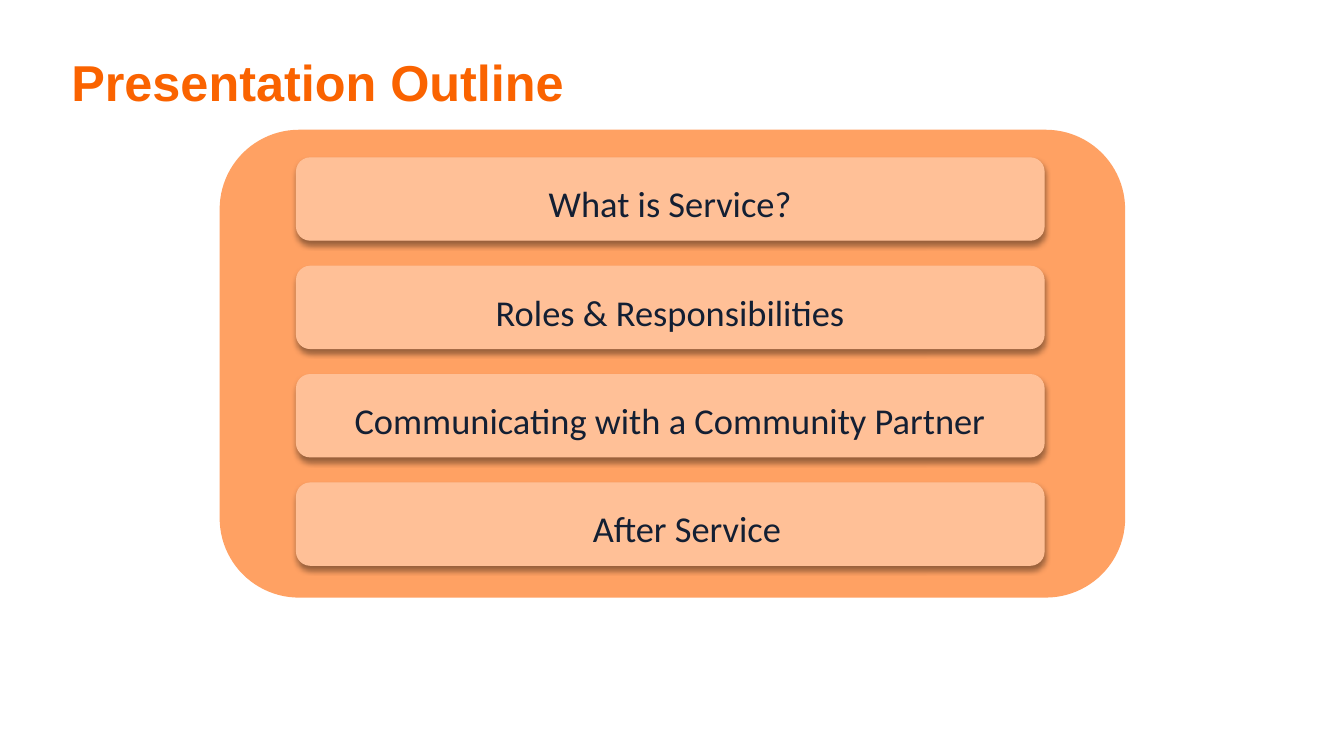
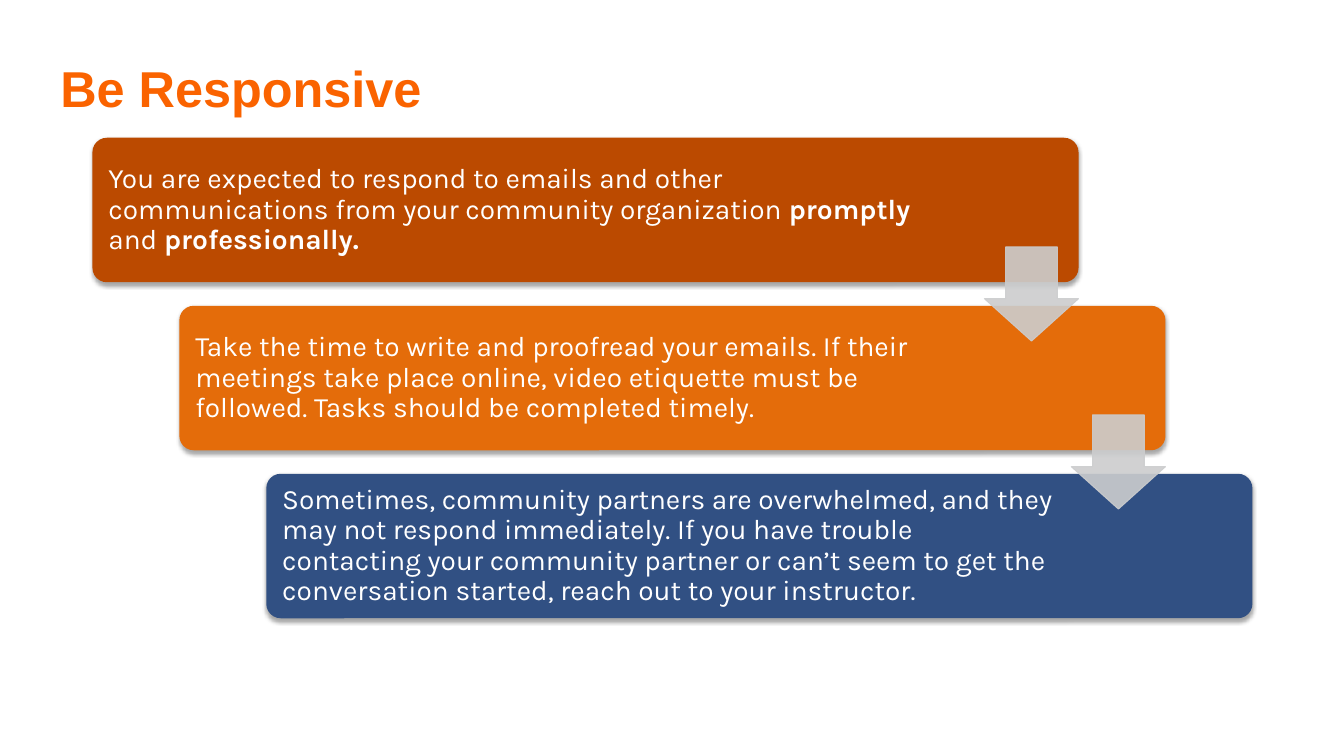
import dataclasses

import pptx
import pptx.dml.color
import pptx.enum.shapes
import pptx.enum.text
import pptx.oxml.ns
import pptx.util
from lxml import etree

SLIDE_WIDTH = pptx.util.Inches(13.33)
SLIDE_HEIGHT = pptx.util.Inches(7.5)
COLUMNS, ROWS = 160, 90

SHAPES = pptx.enum.shapes.MSO_SHAPE
ALIGN = pptx.enum.text.PP_ALIGN
ANCHOR = pptx.enum.text.MSO_ANCHOR


@dataclasses.dataclass(frozen=True)
class Theme:
    title: str = "FA6300"
    panel: str = "FFA163"
    pill: str = "FFC097"
    pill_text: str = "131F33"
    steps: tuple = ("BB4A00", "E46C0A", "315083")
    step_text: str = "FFFFFF"
    arrow: str = "CCCDCE"
    shadow: str = "000000"
    title_font: str = "Arial"
    pill_font: str = "Calibri"
    step_font: str = "Karla"
    title_size: int = 36
    pill_size: int = 26
    step_size: int = 20


THEME = Theme()


def column(count):
    return int(SLIDE_WIDTH * count / COLUMNS)


def row(count):
    return int(SLIDE_HEIGHT * count / ROWS)


def place(left, top, width, height):
    return column(left), row(top), column(width), row(height)


def rgb(value):
    return pptx.dml.color.RGBColor.from_string(value)


def add_child(parent, tag, **attributes):
    return etree.SubElement(parent, pptx.oxml.ns.qn(tag),
                            {name: str(value) for name, value in attributes.items()})


def add_shadow(shape, opacity, blur, distance):
    """Cast a soft shadow downwards; opacity in percent, lengths in points."""
    effects = shape._element.spPr.find(pptx.oxml.ns.qn("a:effectLst"))
    outer = add_child(effects, "a:outerShdw", blurRad=pptx.util.Pt(blur),
                      dist=pptx.util.Pt(distance), dir=90 * 60000, rotWithShape=0)
    color = add_child(outer, "a:srgbClr", val=THEME.shadow)
    add_child(color, "a:alpha", val=opacity * 1000)


def set_opacity(shape, percent):
    """Apply one opacity to the fill and the outline."""
    for color in shape._element.spPr.iter(pptx.oxml.ns.qn("a:srgbClr")):
        add_child(color, "a:alpha", val=percent * 1000)


def add_block(slide, kind, box, fill, line_width=0, adjustments=()):
    shape = slide.shapes.add_shape(kind, *place(*box))
    shape.shadow.inherit = False
    for index, value in enumerate(adjustments):
        shape.adjustments[index] = value
    shape.fill.solid()
    shape.fill.fore_color.rgb = rgb(fill)
    if line_width:
        shape.line.color.rgb = rgb(fill)
        shape.line.width = pptx.util.Pt(line_width)
    else:
        shape.line.fill.background()
    return shape


def write(shape, runs, font, color, frame_format, paragraph_format):
    """Fill a shape with one paragraph of (text, bold) runs."""
    frame = shape.text_frame
    paragraph = frame.paragraphs[0]
    for target, values in ((frame, {"word_wrap": True, **frame_format}),
                           (paragraph, paragraph_format)):
        for name, value in values.items():
            setattr(target, name, value)
    for text, bold in runs:
        run = paragraph.add_run()
        run.text = text
        for name, value in {**font, "bold": bold}.items():
            setattr(run.font, name, value)
        run.font.color.rgb = rgb(color)


def add_title(slide, text, left, top):
    box = slide.shapes.add_textbox(*place(left, top, 138, 8.5))
    write(box, [(text, True)],
          {"name": THEME.title_font, "size": pptx.util.Pt(THEME.title_size)},
          THEME.title, {"vertical_anchor": ANCHOR.TOP}, {"alignment": ALIGN.LEFT})


def add_pill(slide, text, top, indent):
    pill = add_block(slide, SHAPES.ROUNDED_RECTANGLE, (35.3, top, 89, 9.8), THEME.pill, 0.75)
    add_shadow(pill, 40, 4, 3)
    write(pill, [(text, False)],
          {"name": THEME.pill_font, "size": pptx.util.Pt(THEME.pill_size)},
          THEME.pill_text,
          {"vertical_anchor": ANCHOR.MIDDLE, "margin_left": column(indent),
           "margin_right": 0, "margin_top": row(1), "margin_bottom": 0},
          {"alignment": ALIGN.CENTER})


def add_step(slide, runs, box, fill, right_margin):
    card = add_block(slide, SHAPES.ROUNDED_RECTANGLE, box, fill, adjustments=(0.1,))
    add_shadow(card, 35, 3.1, 1.8)
    write(card, runs,
          {"name": THEME.step_font, "size": pptx.util.Pt(THEME.step_size)},
          THEME.step_text,
          {"vertical_anchor": ANCHOR.MIDDLE, "margin_left": column(1.4),
           "margin_right": column(right_margin)},
          {"alignment": ALIGN.LEFT, "line_spacing": 0.9})


def add_step_arrow(slide, right, top):
    side = 11.2
    arrow = add_block(slide, SHAPES.DOWN_ARROW, (right - side, top, side, side),
                      THEME.arrow, 0.75, (0.55, 0.45))
    set_opacity(arrow, 90)


def build_outline(slide):
    add_title(slide, "Presentation Outline", 7.3, 5.5)
    add_block(slide, SHAPES.ROUNDED_RECTANGLE, (26.4, 15.7, 107.3, 55.2), THEME.panel, 3)
    topics = (("What is Service?", 0), ("Roles & Responsibilities", 0),
              ("Communicating with a Community Partner", 0), ("After Service", 4))
    for index, (topic, indent) in enumerate(topics):
        add_pill(slide, topic, 18.8 + 12.9 * index, indent)


def build_responsive(slide):
    add_title(slide, "Be Responsive", 6, 6.2)
    steps = (
        ([("You are expected to respond to emails and other communications from your "
           "community organization ", False), ("promptly", True), (" and ", False),
          ("professionally.", True)], 19),
        ([("Take the time to write and proofread your emails. If their meetings take place "
           "online, video etiquette must be followed. Tasks should be completed timely.",
           False)], 23),
        ([("Sometimes, community partners are overwhelmed, and they may not respond "
           "immediately. If you have trouble contacting your community partner or can’t "
           "seem to get the conversation started, reach out to your instructor.",
           False)], 23),
    )
    width, height = 117.4, 17.2
    corners = [(11 + 10.35 * index, 16.4 + 20 * index) for index in range(len(steps))]
    for (runs, right_margin), (left, top), fill in zip(steps, corners, THEME.steps):
        add_step(slide, runs, (left, top, width, height), fill, right_margin)
    for left, top in corners[:-1]:
        add_step_arrow(slide, left + width, top + 13)


def main():
    presentation = pptx.Presentation()
    presentation.slide_width = SLIDE_WIDTH
    presentation.slide_height = SLIDE_HEIGHT
    blank_layout = presentation.slide_layouts[6]
    for build in (build_outline, build_responsive):
        build(presentation.slides.add_slide(blank_layout))
    presentation.save("out.pptx")


if __name__ == "__main__":
    main()
